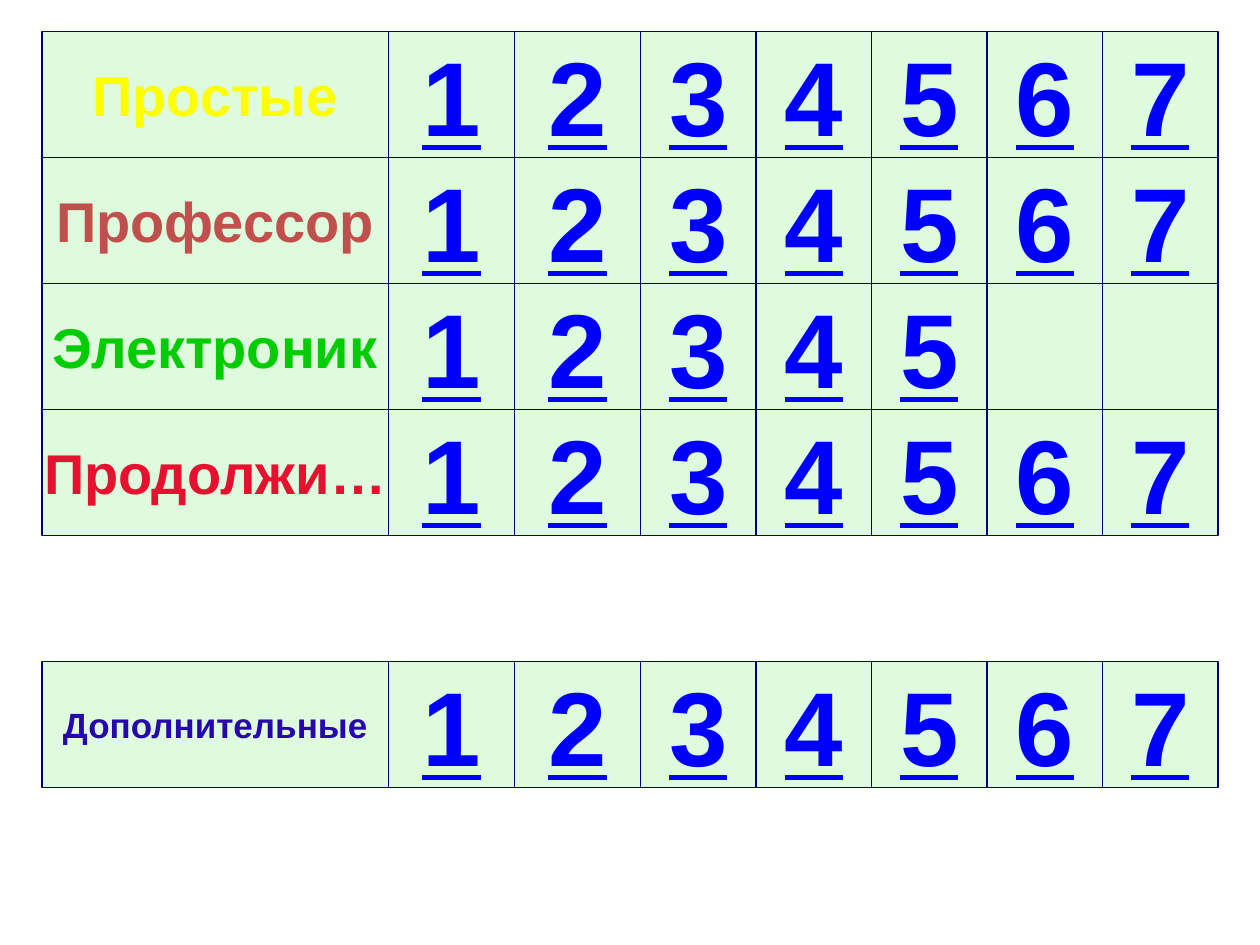
import itertools

import pptx
import pptx.dml.color
import pptx.enum.shapes
import pptx.enum.text
import pptx.util

COLS, ROWS = 120, 90
WIDE, HIGH = pptx.util.Inches(10), pptx.util.Inches(7.5)
LEFT, TOP, STEP = 4, 3, 12
SPANS = [33, 12, 12, 11, 11, 11, 11, 11]
HUES = {
    "cell": "DEFBDD",
    "edge": "000080",
    "link": "0000FF",
    "easy": "FFFF00",
    "prof": "C0504D",
    "robot": "00CC00",
    "next": "E5112F",
    "extra": "2707AD",
}
LINES = [
    (0, "Простые", "easy", 32, 7),
    (1, "Профессор", "prof", 32, 7),
    (2, "Электроник", "robot", 32, 5),
    (3, "Продолжи…", "next", 32, 7),
    (5, "Дополнительные", "extra", 20, 7),
]


def tint(name):
    """Return the named colour."""
    return pptx.dml.color.RGBColor.from_string(HUES[name])


def write(shape, text, size=60, hue="link", under=False):
    """Put bold centred text in a shape."""
    frame = shape.text_frame
    frame.word_wrap = False
    frame.vertical_anchor = pptx.enum.text.MSO_ANCHOR.MIDDLE
    para = frame.paragraphs[0]
    para.alignment = pptx.enum.text.PP_ALIGN.CENTER
    run = para.add_run()
    run.text = text
    font = run.font
    font.name, font.size, font.bold = "Arial", pptx.util.Pt(size), True
    font.color.rgb = tint(hue)
    if under:
        font.underline = True


def add_cell(group, left, top, width, height):
    """Draw one bordered cell, measured in grid columns and rows."""
    cell = group.shapes.add_shape(
        pptx.enum.shapes.MSO_SHAPE.RECTANGLE,
        round(WIDE * left / COLS), round(HIGH * top / ROWS),
        round(WIDE * width / COLS), round(HIGH * height / ROWS),
    )
    cell.shadow.inherit = False
    cell.fill.solid()
    cell.fill.fore_color.rgb = tint("cell")
    cell.line.color.rgb = tint("edge")
    cell.line.width = pptx.util.Pt(0.75)
    return cell


def add_line(group, box, label, hue, size, count):
    """Draw a topic and its numbered cells across the given box."""
    left, top, width, height = box
    unit = width / sum(SPANS)
    starts = itertools.accumulate(SPANS, initial=0)
    for index, (start, span) in enumerate(zip(starts, SPANS)):
        cell = add_cell(group, left + start * unit, top, span * unit, height)
        if index == 0:
            write(cell, label, size=size, hue=hue)
        elif index <= count:
            write(cell, str(index), under=True)


def main():
    """Build the question board and save it."""
    deck = pptx.Presentation()
    deck.slide_width, deck.slide_height = WIDE, HIGH
    slide = deck.slides.add_slide(deck.slide_layouts[6])
    board = slide.shapes.add_group_shape()
    for row, *topic in LINES:
        box = (LEFT, TOP + row * STEP, sum(SPANS), STEP)
        add_line(board, box, *topic)
    deck.save("out.pptx")


if __name__ == "__main__":
    main()
